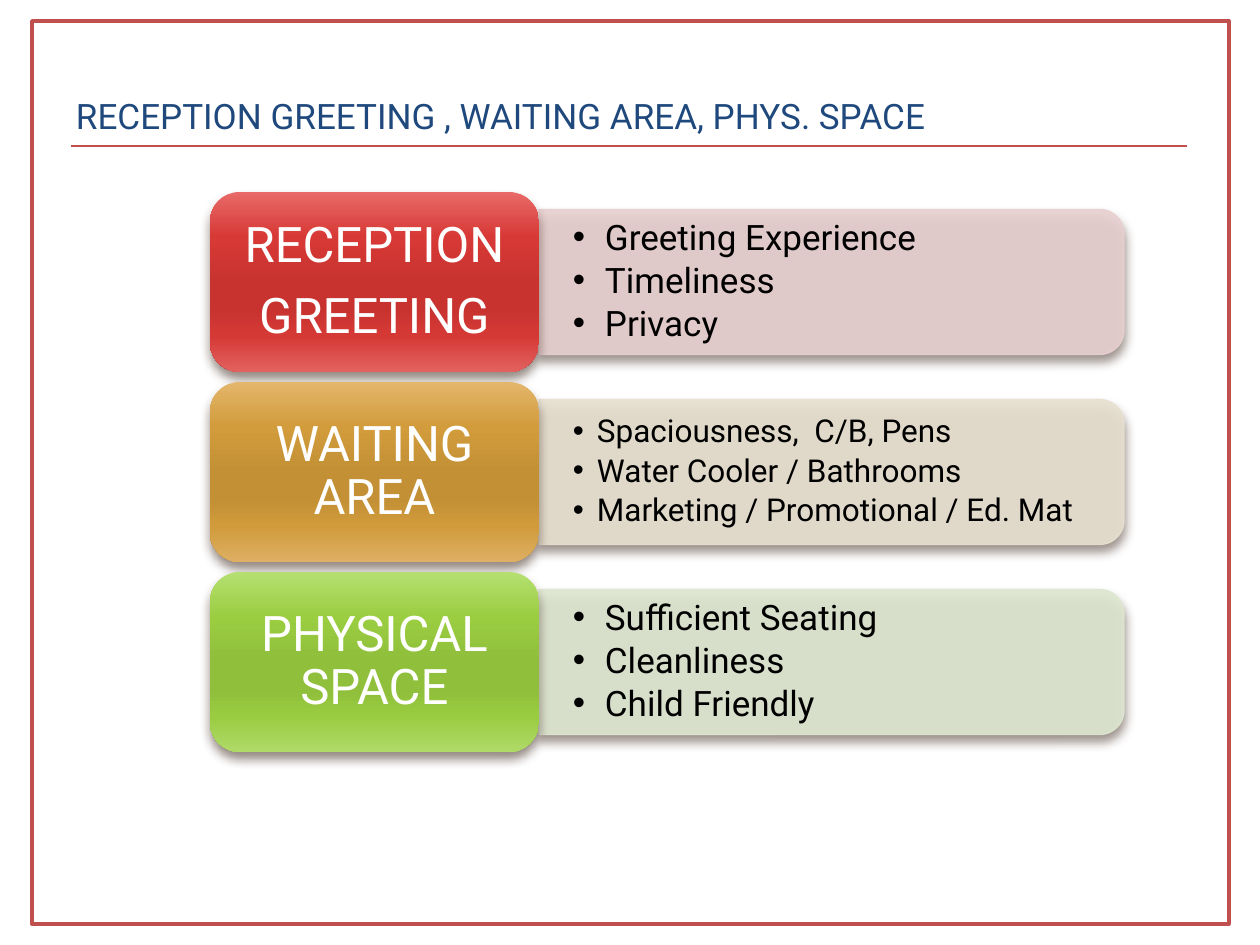
from lxml import etree
from pptx import Presentation
from pptx import util as u
from pptx.dml.color import RGBColor
from pptx.enum import shapes, text
from pptx.oxml.ns import qn

FONT = "Roboto"
COLORS = {
    "rule": "C0504D", "title": "1F497D", "label": "FFFFFF",
    "list": "000000", "shadow": "4E3B30",
    "red bar": "E8D0D0", "gold bar": "E8E1D1", "green bar": "DEE7D1",
}
STOPS = (0, 25, 50, 65, 80, 100)
GRADIENTS = {
    "red": ("E86A68", "D73936", "C83330", "C83330", "D53935", "E26260"),
    "gold": ("E4B66C", "D29C3C", "C39035", "C39035", "D19B3B", "DEAF64"),
    "green": ("B5E071", "9BCD41", "8FBF3B", "8FBF3B", "9ACC41", "AFDA69"),
}
# hue, label paragraphs, list items, list size in points, hanging indent in px
ROWS = [
    ("red", ["RECEPTION", "GREETING"],
     ["Greeting Experience", "Timeliness", "Privacy"], 20, 32),
    ("gold", ["WAITING AREA"],
     ["Spaciousness,  C/B, Pens", "Water Cooler / Bathrooms",
      "Marketing / Promotional / Ed. Mat"], 18, 24),
    ("green", ["PHYSICAL SPACE"],
     ["Sufficient Seating", "Cleanliness", "Child Friendly"], 20, 32),
]


def px(length):
    return u.Emu(round(length * 914400 / 126))


def rgb(name):
    return RGBColor.from_string(COLORS[name])


def child(parent, tag, **attributes):
    return etree.SubElement(parent, qn(tag), {k: str(v) for k, v in attributes.items()})


def add_run(paragraph, words, size, color):
    run = paragraph.add_run()
    run.text = words
    run.font.name = FONT
    run.font.size = u.Pt(size)
    run.font.color.rgb = rgb(color)


def set_frame(frame, inset_x, inset_y):
    frame.word_wrap = True
    frame.auto_size = text.MSO_AUTO_SIZE.NONE
    frame.vertical_anchor = text.MSO_ANCHOR.MIDDLE
    frame.margin_left = frame.margin_right = px(inset_x)
    frame.margin_top = frame.margin_bottom = px(inset_y)


def add_paragraphs(frame, lines, size, color, space_after):
    """Add one paragraph a line and return them."""
    paragraphs = []
    for i, line in enumerate(lines):
        paragraph = frame.add_paragraph() if i else frame.paragraphs[0]
        paragraph.line_spacing = 0.9
        paragraph.space_after = u.Pt(space_after)
        add_run(paragraph, line, size, color)
        paragraphs.append(paragraph)
    return paragraphs


def add_shadow(shape):
    shape.shadow.inherit = False
    effects = shape._element.spPr.find(qn("a:effectLst"))
    shadow = child(effects, "a:outerShdw", blurRad=u.Pt(6), dist=u.Pt(4),
                   dir=5400000, rotWithShape=0)
    color = child(shadow, "a:srgbClr", val=COLORS["shadow"])
    child(color, "a:alpha", val=60000)


def fill_gradient(shape, hexes):
    """Fill the shape from top to bottom."""
    shape.fill.gradient()
    shape.fill.gradient_angle = 270
    stops = shape._element.spPr.find(".//" + qn("a:gsLst"))
    for stop in list(stops):
        stops.remove(stop)
    for position, value in zip(STOPS, hexes):
        stop = child(stops, "a:gs", pos=position * 1000)
        child(stop, "a:srgbClr", val=value)


def add_border(slide, left, top, width, height):
    border = slide.shapes.add_shape(shapes.MSO_SHAPE.RECTANGLE,
                                    px(left), px(top), px(width), px(height))
    border.shadow.inherit = False
    border.fill.background()
    border.line.color.rgb = rgb("rule")
    border.line.width = u.Pt(2)


def add_heading(slide, left, top, width, height):
    title = slide.shapes.title
    title.left, title.top = px(left + 8), px(top)
    title.width, title.height = px(903), px(height)
    set_frame(title.text_frame, 13, 6)
    paragraph = title.text_frame.paragraphs[0]
    paragraph.alignment = text.PP_ALIGN.LEFT
    add_run(paragraph, "RECEPTION GREETING , WAITING AREA, PHYS. SPACE", 20, "title")
    # The title text starts just inside the left end of the rule.
    title.left = px(left - 8)
    rule = slide.shapes.add_connector(shapes.MSO_CONNECTOR.STRAIGHT,
                                      px(left), px(top + height - 1),
                                      px(left + width), px(top + height - 1))
    rule.line.color.rgb = rgb("rule")
    rule.line.width = u.Pt(1.5)
    child(rule._element.spPr, "a:effectLst")


def add_bar(slide, left, top, width, height, color):
    """Add a bar rounded at its right end: a top-rounded shape turned by 90°."""
    shift = (width - height) / 2
    bar = slide.shapes.add_shape(shapes.MSO_SHAPE.ROUND_2_SAME_RECTANGLE,
                                 px(left + shift), px(top - shift),
                                 px(height), px(width))
    bar.rotation = 90
    bar.fill.solid()
    bar.fill.fore_color.rgb = rgb(color)
    bar.line.color.rgb = rgb(color)
    bar.line.width = u.Pt(0.79)
    for value in bar._element.spPr.iter(qn("a:srgbClr")):
        child(value, "a:alpha", val=90000)
    add_shadow(bar)


def add_list(slide, left, top, width, height, items, size, indent):
    box = slide.shapes.add_textbox(px(left), px(top), px(width), px(height))
    set_frame(box.text_frame, 34, 18)
    for paragraph in add_paragraphs(box.text_frame, items, size, "list", 3):
        paragraph.level = 1
        properties = paragraph._p.get_or_add_pPr()
        properties.set("marL", str(px(indent)))
        properties.set("indent", str(-px(indent)))
        child(properties, "a:buFont", typeface="Arial")
        child(properties, "a:buChar", char="•")


def add_label(slide, left, top, width, height, lines, hue):
    label = slide.shapes.add_shape(shapes.MSO_SHAPE.ROUNDED_RECTANGLE,
                                   px(left), px(top), px(width), px(height))
    fill_gradient(label, GRADIENTS[hue])
    label.line.fill.background()
    add_shadow(label)
    set_frame(label.text_frame, 24, 16)
    for paragraph in add_paragraphs(label.text_frame, lines, 28, "label", 10):
        paragraph.alignment = text.PP_ALIGN.CENTER


def add_row(slide, left, top, width, height, row):
    hue, label, items, size, indent = row
    label_width, bar_height = 329, 145
    bar_left = left + label_width
    bar_width = width - label_width
    bar_top = top + (height - bar_height) / 2
    add_bar(slide, bar_left, bar_top, bar_width, bar_height, hue + " bar")
    add_list(slide, bar_left, bar_top + 8, bar_width - 8, bar_height - 16,
             items, size, indent)
    add_label(slide, left, top, label_width, height, label, hue)


def main():
    presentation = Presentation()
    presentation.slide_width, presentation.slide_height = px(1260), px(945)
    slide = presentation.slides.add_slide(presentation.slide_layouts[5])
    add_border(slide, 32, 21, 1197, 903)
    add_heading(slide, 71, 84, 1116, 63)
    for i, row in enumerate(ROWS):
        add_row(slide, 210, 192 + 190 * i, 914, 180, row)
    presentation.save("out.pptx")


if __name__ == "__main__":
    main()
